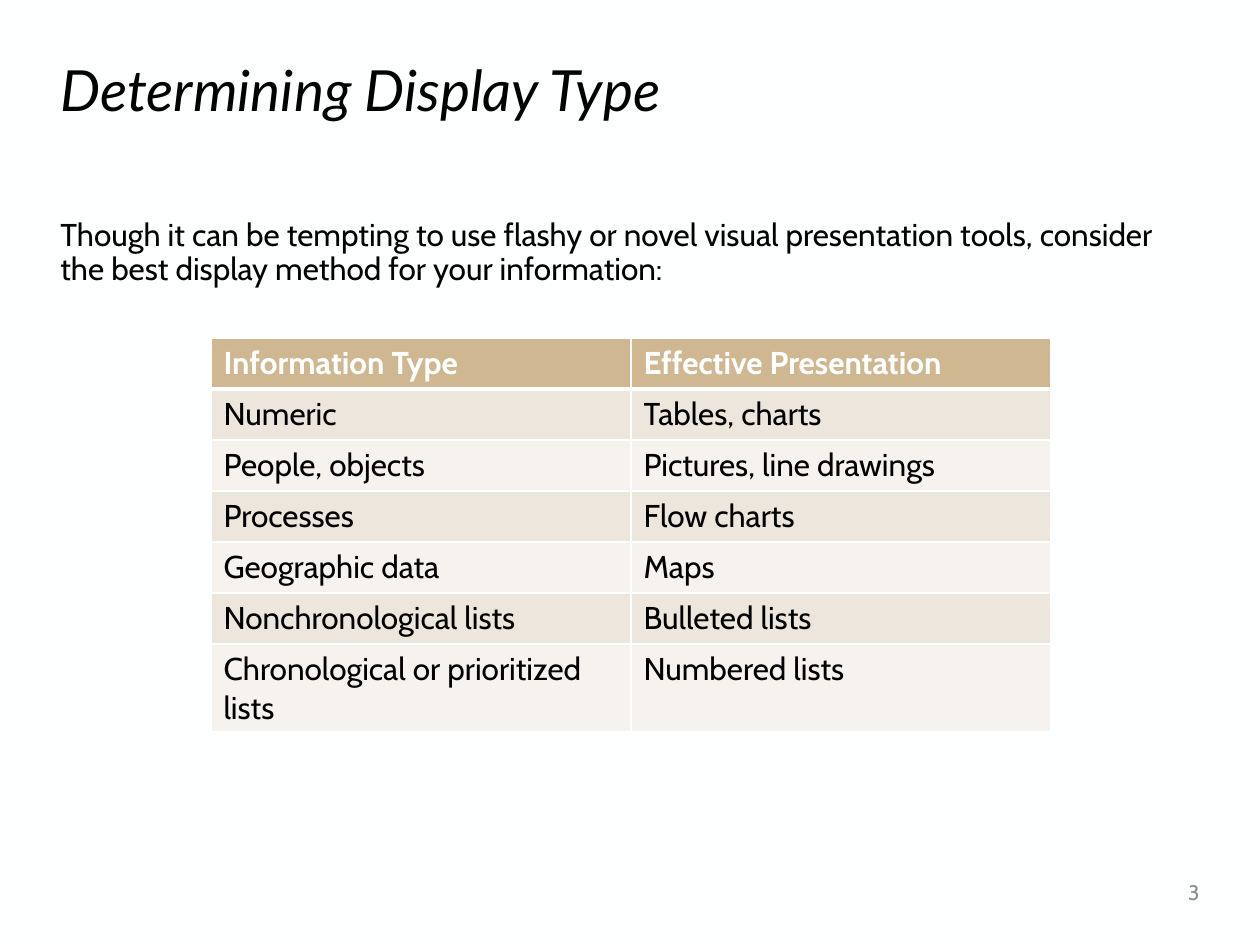
from dataclasses import dataclass
from typing import Any, NamedTuple

from lxml.etree import SubElement
from pptx import Presentation
from pptx.dml.color import RGBColor
from pptx.enum.text import MSO_ANCHOR, PP_ALIGN
from pptx.oxml.ns import qn
from pptx.util import Emu, Pt

PX_PER_INCH = 126


def px(n: int) -> Emu:
    return Emu(round(n * 914400 / PX_PER_INCH))


# Colours, fonts and type sizes
@dataclass(frozen=True)
class Theme:
    paper: str = "FEFFFF"
    ink: str = "000000"
    muted: str = "8C8C8C"
    header: str = "CFB891"
    bands: tuple[str, str] = ("EDE6DC", "F6F3EE")
    title_font: str = "Lato"
    body_font: str = "Cabin"
    title_size: float = 32.4
    body_size: float = 18
    number_size: float = 12
    rule: float = 1
    header_rule: float = 3


THEME = Theme()


class Box(NamedTuple):
    left: int
    top: int
    width: int
    height: int


@dataclass(frozen=True)
class TextItem:
    text: str
    box: Box
    color: str
    font: dict[str, Any]
    paragraph: dict[str, Any]
    anchor: MSO_ANCHOR = MSO_ANCHOR.MIDDLE


TEXTS = [
    TextItem("Determining Display Type", Box(48, 53, 1164, 81), THEME.ink,
             {"name": THEME.title_font, "size": Pt(THEME.title_size), "italic": True},
             {"line_spacing": 0.9}),
    TextItem("Though it can be tempting to use flashy or novel visual presentation tools, "
             "consider the best display method for your information:",
             Box(48, 213, 1164, 614), THEME.ink,
             {"name": THEME.body_font, "size": Pt(THEME.body_size)},
             {"line_spacing": 0.9}, MSO_ANCHOR.TOP),
    TextItem("3", Box(1061, 867, 151, 50), THEME.muted,
             {"name": THEME.body_font, "size": Pt(THEME.number_size)},
             {"alignment": PP_ALIGN.RIGHT}),
]

TABLE_BOX = Box(211, 338, 840, 357)
ROWS = [
    ("Information Type", "Effective Presentation"),
    ("Numeric", "Tables, charts"),
    ("People, objects", "Pictures, line drawings"),
    ("Processes", "Flow charts"),
    ("Geographic data", "Maps"),
    ("Nonchronological lists", "Bulleted lists"),
    ("Chronological or prioritized lists", "Numbered lists"),
]


def set_all(target: Any, values: dict[str, Any]) -> None:
    for name, value in values.items():
        setattr(target, name, value)


def write(tf: Any, text: str, color: str, font: dict[str, Any]) -> Any:
    p = tf.paragraphs[0]
    r = p.add_run()
    r.text = text
    set_all(r.font, font)
    r.font.color.rgb = RGBColor.from_string(color)
    return p


def draw_text(s: Any, item: TextItem) -> None:
    sp = s.shapes.add_textbox(*map(px, item.box))
    tf = sp.text_frame
    set_all(tf, {"word_wrap": True, "vertical_anchor": item.anchor})
    p = write(tf, item.text, item.color, item.font)
    set_all(p, item.paragraph)


def draw_borders(cell: Any, widths: dict[str, float]) -> None:
    tc_pr = cell._tc.get_or_add_tcPr()
    for side, width in widths.items():
        ln = SubElement(tc_pr, qn(f"a:ln{side}"), w=str(Pt(width)))
        SubElement(SubElement(ln, qn("a:solidFill")), qn("a:srgbClr"), val=THEME.paper)


def draw_table(s: Any, box: Box, rows: list[tuple[str, str]]) -> None:
    table = s.shapes.add_table(len(rows), len(rows[0]), *map(px, box)).table
    for i, row in enumerate(rows):
        table.rows[i].height = px(box.height // len(rows))
        is_header = i == 0
        fill = THEME.header if is_header else THEME.bands[(i - 1) % 2]
        color = THEME.paper if is_header else THEME.ink
        widths = {"L": THEME.rule, "R": THEME.rule,
                  "T": THEME.header_rule if i == 1 else THEME.rule,
                  "B": THEME.header_rule if is_header else THEME.rule}
        for j, text in enumerate(row):
            cell = table.cell(i, j)
            draw_borders(cell, widths)
            cell.fill.solid()
            cell.fill.fore_color.rgb = RGBColor.from_string(fill)
            write(cell.text_frame, text, color,
                  {"name": THEME.body_font, "size": Pt(THEME.body_size), "bold": is_header})


def main() -> None:
    prs = Presentation()
    set_all(prs, {"slide_width": px(1260), "slide_height": px(945)})
    s = prs.slides.add_slide(prs.slide_layouts[6])

    # Background
    s.background.fill.solid()
    s.background.fill.fore_color.rgb = RGBColor.from_string(THEME.paper)

    # Title, introduction and page number
    for item in TEXTS:
        draw_text(s, item)

    # Display methods by information type
    draw_table(s, TABLE_BOX, ROWS)

    prs.save("out.pptx")


if __name__ == "__main__":
    main()
